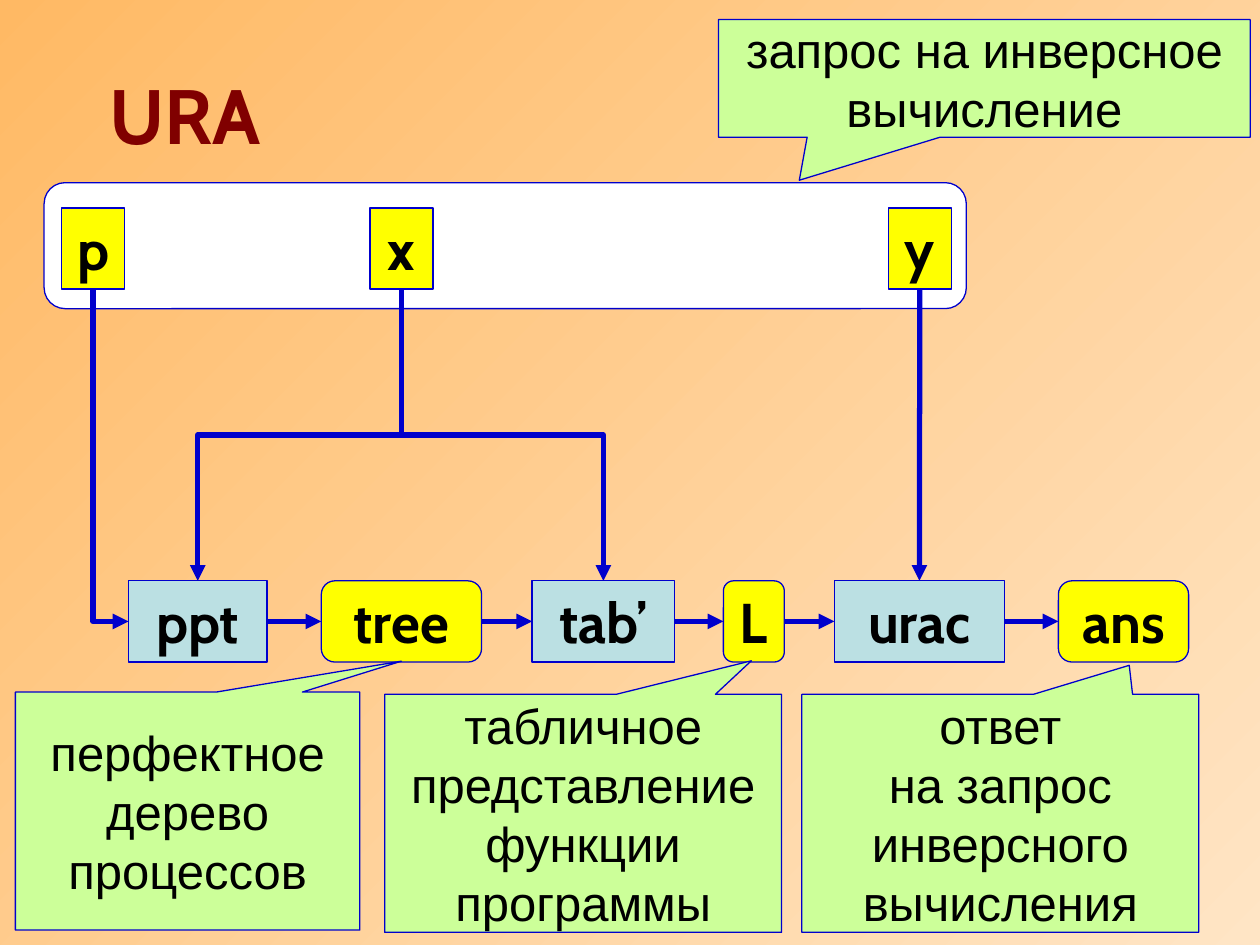
from pptx import Presentation
from pptx.util import Pt
from pptx.dml.color import RGBColor as RGB
from pptx.enum.shapes import MSO_SHAPE as Form, MSO_CONNECTOR as Conn
from pptx.enum.text import PP_ALIGN as Align, MSO_ANCHOR as Anchor
from pptx.oxml import parse_xml
from pptx.oxml.ns import qn
from lxml import etree

HEX = {"panel": "FFFFFF", "data": "FFFF00", "step": "BBE0E3", "note": "CCFF99",
       "line": "0000CC", "text": "000000", "title": "800000", "shade": "808080",
       "dark": "FFB964", "light": "FFE5C5"}
HUE = {name: RGB.from_string(code) for name, code in HEX.items()}
NS = "http://schemas.openxmlformats.org/drawingml/2006/main"
TOP, DOWN, HIGH = 118.8, 331.9, 46.4
LEFT, BASE, RIGHT = 1, 2, 3  # connection sites; 0 is the top

deck = Presentation()
deck.slide_width, deck.slide_height = Pt(720), Pt(540)
slide = deck.slides.add_slide(deck.slide_layouts[6])
shapes = slide.shapes


def add_box(form, x, y, w, h, hue, text="", size=32, face="Cabin"):
    box = shapes.add_shape(form, Pt(x), Pt(y), Pt(w), Pt(h))
    box.shadow.inherit = False
    box.fill.solid()
    box.fill.fore_color.rgb = HUE[hue]
    box.line.color.rgb = HUE["line"]
    box.line.width = Pt(0.75)
    frame = box.text_frame
    frame.text = text
    frame.vertical_anchor = Anchor.MIDDLE
    frame.word_wrap = hue == "note"
    for para in frame.paragraphs:
        para.alignment = Align.CENTER
        for run in para.runs:
            run.font.size, run.font.name = Pt(size), face
            run.font.bold = face == "Cabin"
            run.font.color.rgb = HUE["text"]
    return box


def add_arrow(start, site, end, goal, bend=None):
    kind = Conn.ELBOW if bend else Conn.STRAIGHT
    link = shapes.add_connector(kind, 0, 0, 0, 0)
    link.begin_connect(start, site)
    link.end_connect(end, goal)
    link.line.color.rgb = HUE["line"]
    link.line.width = Pt(3)
    props = link._element.spPr
    if bend:
        # Turn the elbow so that it leaves downwards
        x1, y1, x2, y2 = link.begin_x, link.begin_y, link.end_x, link.end_y
        wide, tall = y2 - y1, abs(x2 - x1)
        link.left, link.top = (x1 + x2 - wide) // 2, (y1 + y2 - tall) // 2
        link.width, link.height = wide, tall
        frame = props.find(qn("a:xfrm"))
        frame.attrib.pop("flipH", None)
        frame.set("rot", str((270 if x2 > x1 else 90) * 60000))
        if x2 > x1:
            frame.set("flipH", "1")
        props.find(qn("a:prstGeom")).set("prst", bend)
    etree.SubElement(props.find(qn("a:ln")), qn("a:tailEnd"), type="triangle")
    etree.SubElement(props, qn("a:effectLst"))


# Background
fill = slide.background.fill
fill.gradient()
fill.gradient_angle = 315
for stop, hue in zip(fill.gradient_stops, ("dark", "light")):
    stop.color.rgb = HUE[hue]

# Query panel
add_box(Form.FLOWCHART_ALTERNATE_PROCESS, 25.2, 104.4, 527, 72, "panel")

# Title with a text shadow
title = shapes.add_textbox(Pt(55.4), Pt(20.2), Pt(656.6), Pt(90)).text_frame
title.word_wrap = True
title.vertical_anchor = Anchor.MIDDLE
title.text = "URA"
font = title.paragraphs[0].runs[0].font
font.size, font.name, font.bold = Pt(44), "Cabin", True
font.color.rgb = HUE["title"]
font._element.find(qn("a:solidFill")).addnext(parse_xml(
    f'<a:effectLst xmlns:a="{NS}"><a:outerShdw dist="35921" dir="2700000">'
    f'<a:srgbClr val="{HEX["shade"]}"/></a:outerShdw></a:effectLst>'))

# Inputs
node = {}
for name, x in (("p", 35.2), ("x", 211.4), ("y", 507.6)):
    node[name] = add_box(Form.RECTANGLE, x, TOP, 36, HIGH, "data", name)

# Chain of steps and results
chain = [("ppt", 73.4, 79.2), ("tree", 183.6, 91.6), ("tab’", 304.1, 81.4),
         ("L", 413.4, 34.8), ("urac", 476.8, 97.2), ("ans", 604.8, 74.4)]
for i, (name, x, w) in enumerate(chain):
    form, hue = ((Form.FLOWCHART_ALTERNATE_PROCESS, "data") if i % 2
                 else (Form.RECTANGLE, "step"))
    node[name] = add_box(form, x, DOWN, w, HIGH, hue, name)

# Arrows along the chain, then from the inputs
for (one, *_), (two, *_) in zip(chain, chain[1:]):
    add_arrow(node[one], RIGHT, node[two], LEFT)
add_arrow(node["p"], BASE, node["ppt"], LEFT, "bentConnector2")
for name in ("ppt", "tab’"):
    add_arrow(node["x"], BASE, node[name], 0, "bentConnector3")
add_arrow(node["y"], BASE, node["urac"], 0)

# Callouts: place, pointer tip, wording
notes = [
    (410.6, 11.2, 303.8, 67.2, -0.348, 0.866, "запрос на инверсное вычисление"),
    (8.8, 395.5, 196.8, 136, 0.621, -0.63, "перфектное дерево процессов"),
    (219.8, 396.8, 226.8, 136, 0.424, -0.641,
     "табличное представление функции программы"),
    (458.2, 396.8, 226.8, 136, 0.325, -0.622,
     "ответ\nна запрос инверсного вычисления"),
]
for x, y, w, h, dx, dy, text in notes:
    note = add_box(Form.RECTANGULAR_CALLOUT, x, y, w, h, "note", text, 28, "Arial")
    note.adjustments[0], note.adjustments[1] = dx, dy

deck.save("out.pptx")
